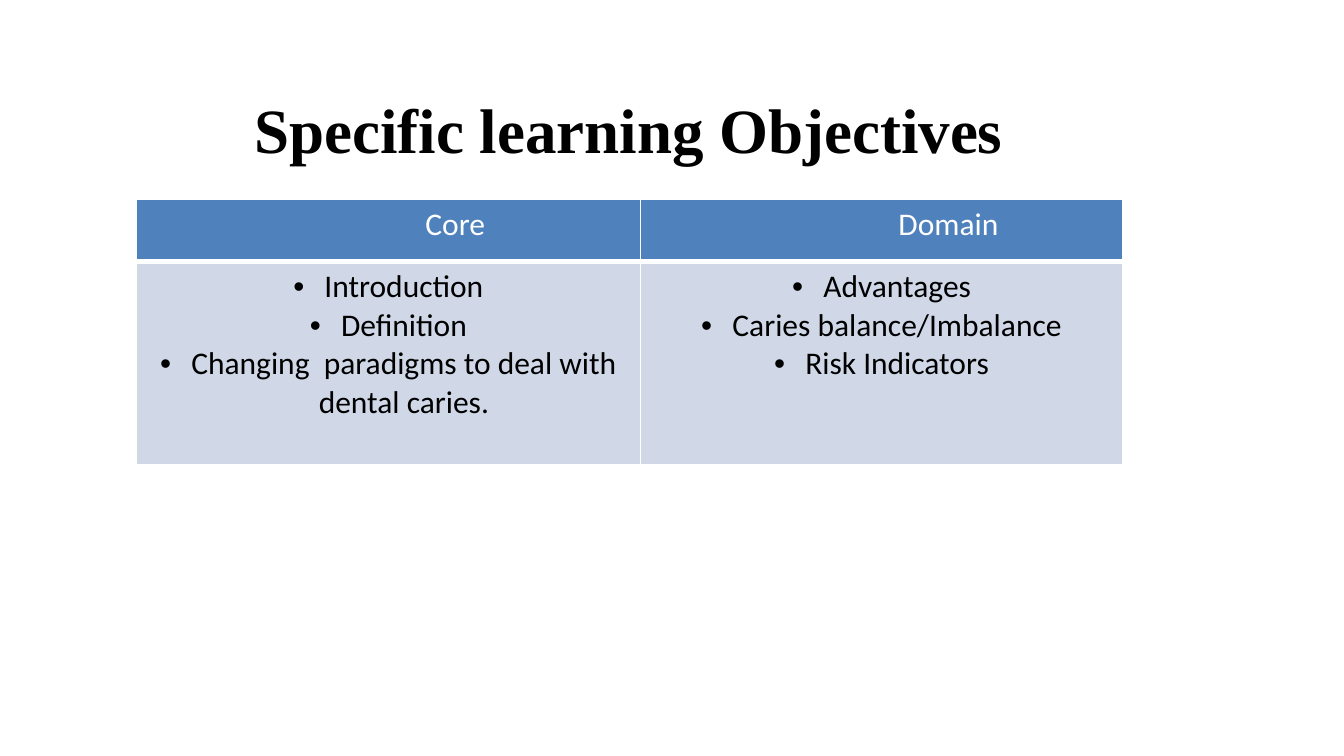
import lxml.etree
import pptx
import pptx.dml.color
import pptx.enum.text
import pptx.oxml.ns
import pptx.util

Cm = pptx.util.Cm
Pt = pptx.util.Pt
ALIGN = pptx.enum.text.PP_ALIGN
ANCHOR = pptx.enum.text.MSO_ANCHOR
AUTO_SIZE = pptx.enum.text.MSO_AUTO_SIZE

OBJECTIVES = {
    "Core": [
        "Introduction",
        "Definition",
        "Changing  paradigms to deal with dental caries.",
    ],
    "Domain": ["Advantages", "Caries balance/Imbalance", "Risk Indicators"],
}
COLUMN_WIDTHS = [Cm(10.16), Cm(9.73)]
ROW_HEIGHTS = [Cm(1.25), Cm(4.1)]
HEADER_INDENT = Cm(2.7)
BULLET_INDENT = Cm(0.63)

TITLE_FONT = {"name": "Times New Roman", "size": Pt(36), "bold": True}
CELL_FONT = {"name": "Calibri", "size": Pt(18), "bold": False}


def color(value):
    return pptx.dml.color.RGBColor.from_string(value)


def add_element(parent, tag, **attributes):
    return lxml.etree.SubElement(parent, pptx.oxml.ns.qn(tag), attributes)


def set_attributes(target, values):
    for name, value in values.items():
        setattr(target, name, value)


def format_font(paragraph, font_values, font_color):
    set_attributes(paragraph.font, font_values)
    paragraph.font.color.rgb = color(font_color)


def set_borders(cell, bottom_width):
    properties = cell._tc.get_or_add_tcPr()
    widths = {"L": Pt(1), "R": Pt(1), "T": Pt(1), "B": bottom_width}
    for index, (side, width) in enumerate(widths.items()):
        line = add_element(properties, f"a:ln{side}", w=str(width))
        fill = add_element(line, "a:solidFill")
        add_element(fill, "a:srgbClr", val="FFFFFF")
        properties.insert(index, line)


def fill_cell(cell, texts, fill_color, font_color, indent, bullet, bottom_width):
    cell.fill.solid()
    cell.fill.fore_color.rgb = color(fill_color)
    set_borders(cell, bottom_width)
    frame = cell.text_frame
    frame.text = "\n".join(texts)
    for paragraph in frame.paragraphs:
        paragraph.alignment = ALIGN.CENTER
        properties = paragraph._p.get_or_add_pPr()
        properties.set("marL", str(indent))
        if bullet:
            properties.set("indent", str(-indent))
            add_element(properties, "a:buFont", typeface="Arial")
            add_element(properties, "a:buChar", char=bullet)
        format_font(paragraph, CELL_FONT, font_color)


def place_title(slide, left, top, width, height):
    title = slide.shapes.title
    set_attributes(title, {"left": left, "top": top, "width": width, "height": height})
    frame = title.text_frame
    frame.text = "Specific learning Objectives"
    set_attributes(frame, {
        "word_wrap": True,
        "auto_size": AUTO_SIZE.NONE,
        "vertical_anchor": ANCHOR.TOP,
    })
    paragraph = frame.paragraphs[0]
    paragraph.alignment = ALIGN.LEFT
    format_font(paragraph, TITLE_FONT, "000000")


def place_objectives(slide, left, top, width, height):
    table = slide.shapes.add_table(
        len(ROW_HEIGHTS), len(OBJECTIVES), left, top, width, height
    ).table
    for row, row_height in zip(table.rows, ROW_HEIGHTS):
        row.height = row_height
    for index, (heading, items) in enumerate(OBJECTIVES.items()):
        table.columns[index].width = COLUMN_WIDTHS[index]
        fill_cell(table.cell(0, index), [heading], "4F81BD", "FFFFFF",
                  HEADER_INDENT, None, Pt(3))
        fill_cell(table.cell(1, index), items, "D0D8E8", "000000",
                  BULLET_INDENT, "•", Pt(1))


def main():
    presentation = pptx.Presentation()
    presentation.slide_width = Cm(27.1)
    presentation.slide_height = Cm(15.24)
    slide = presentation.slides.add_slide(presentation.slide_layouts[5])
    place_objectives(slide, Cm(2.75), Cm(4.02), sum(COLUMN_WIDTHS), sum(ROW_HEIGHTS))
    place_title(slide, Cm(4.88), Cm(1.7), Cm(16.08), Cm(1.8))
    presentation.save("out.pptx")


if __name__ == "__main__":
    main()
